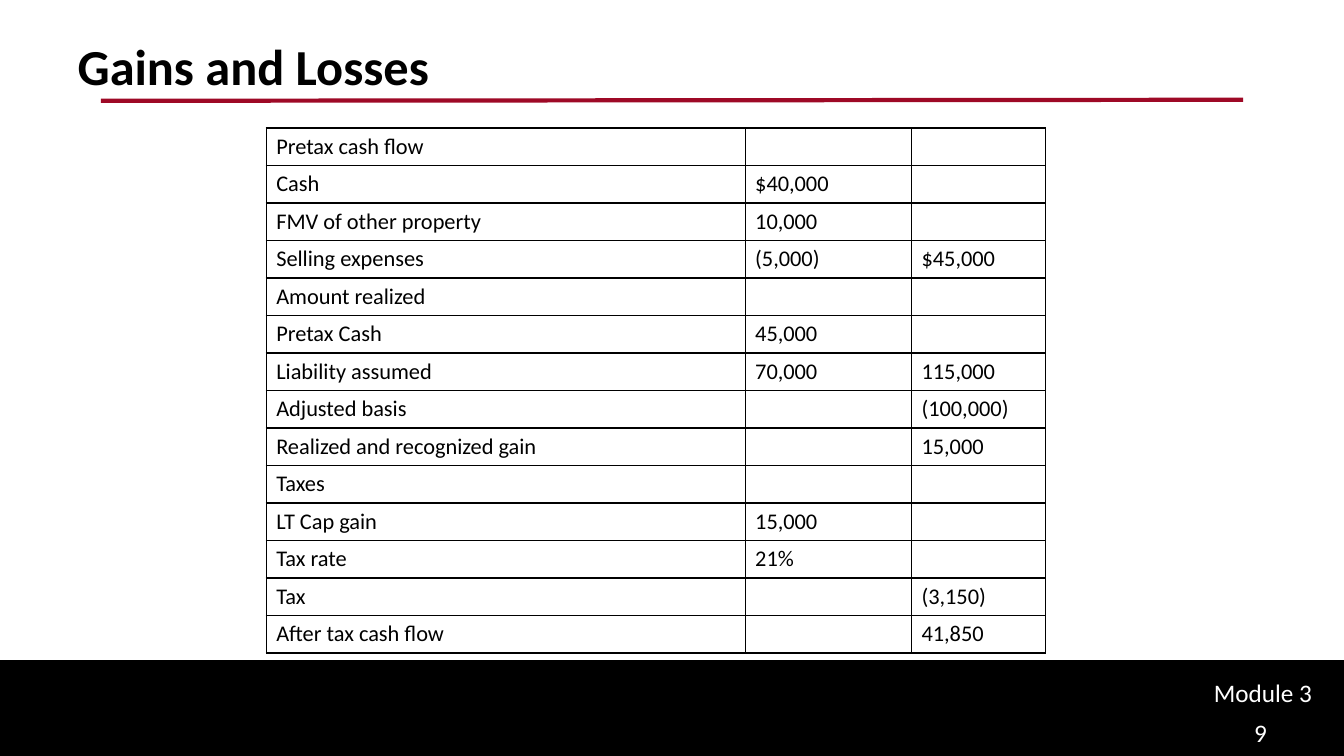
"""Build the Gains and Losses slide with its cash flow table."""
from lxml import etree
from pptx import Presentation
from pptx import util as u
from pptx.dml.color import RGBColor
from pptx.enum import shapes, text
from pptx.oxml import ns


def rgb(color):
    return RGBColor.from_string(color)


def write(tf, words, size=16, color="000000", bold=False):
    tf.vertical_anchor = text.MSO_ANCHOR.TOP
    p = tf.paragraphs[0]
    p.alignment = text.PP_ALIGN.LEFT
    if not words:
        p._p.get_or_add_endParaRPr().set("sz", str(size * 100))
        return
    r = p.add_run()
    r.text = words
    r.font.name = "Calibri"
    r.font.size = u.Pt(size)
    r.font.bold = bold
    r.font.color.rgb = rgb(color)


prs = Presentation()
prs.slide_width, prs.slide_height = u.Inches(13.33), u.Inches(7.5)
s = prs.slides.add_slide(prs.slide_layouts[5])

band_top = u.Inches(6.56)
band = s.shapes.add_shape(shapes.MSO_SHAPE.RECTANGLE, 0, band_top,
                          prs.slide_width, prs.slide_height - band_top)
band.shadow.inherit = False
band.fill.solid()
band.fill.fore_color.rgb = rgb("000000")
band.line.color.rgb = rgb("000000")
band.line.width = u.Pt(2)

rule = s.shapes.add_connector(shapes.MSO_CONNECTOR.STRAIGHT, u.Inches(1), u.Inches(1),
                              u.Inches(12.33), u.Inches(0.99))
rule.line.color.rgb = rgb("9E0926")
rule.line.width = u.Pt(3)
etree.SubElement(rule._element.spPr, ns.qn("a:effectLst"))

title = s.shapes.title
title.left, title.top = u.Inches(0.67), u.Inches(0.3)
title.width, title.height = u.Inches(12), u.Inches(1.25)
title.text_frame.auto_size = text.MSO_AUTO_SIZE.NONE
write(title.text_frame, "Gains and Losses", size=36, bold=True)

rows = [
    ("Pretax cash flow", "", ""),
    ("Cash", "$40,000", ""),
    ("FMV of other property", "10,000", ""),
    ("Selling expenses", "(5,000)", "$45,000"),
    ("Amount realized", "", ""),
    ("Pretax Cash", "45,000", ""),
    ("Liability assumed", "70,000", "115,000"),
    ("Adjusted basis", "", "(100,000)"),
    ("Realized and recognized gain", "", "15,000"),
    ("Taxes", "", ""),
    ("LT Cap gain", "15,000", ""),
    ("Tax rate", "21%", ""),
    ("Tax", "", "(3,150)"),
    ("After tax cash flow", "", "41,850"),
]
col_widths = [4.75, 1.65, 1.33]
row_height = 0.37
table = s.shapes.add_table(len(rows), len(col_widths), u.Inches(2.64), u.Inches(1.27),
                           u.Inches(sum(col_widths)),
                           u.Inches(row_height * len(rows))).table
table.first_row = table.horz_banding = False
for column, width in zip(table.columns, col_widths):
    column.width = u.Inches(width)
for i, row in enumerate(rows):
    table.rows[i].height = u.Inches(row_height)
    for j, words in enumerate(row):
        cell = table.cell(i, j)
        write(cell.text_frame, words)
        cell.fill.background()
        tcPr = cell._tc.get_or_add_tcPr()
        for k, side in enumerate(("lnL", "lnR", "lnT", "lnB")):
            border = etree.Element(ns.qn(f"a:{side}"), w=str(u.Pt(1)))
            fill = etree.SubElement(border, ns.qn("a:solidFill"))
            etree.SubElement(fill, ns.qn("a:srgbClr"), val="000000")
            tcPr.insert(k, border)

footers = [("Module 3", 11.94, 6.67, 1.32, 0.4), ("9", 12.34, 7.07, 0.91, 0.43)]
for words, *box in footers:
    tf = s.shapes.add_textbox(*map(u.Inches, box)).text_frame
    tf.word_wrap = True
    write(tf, words, size=18, color="FFFFFF")

prs.save("out.pptx")
